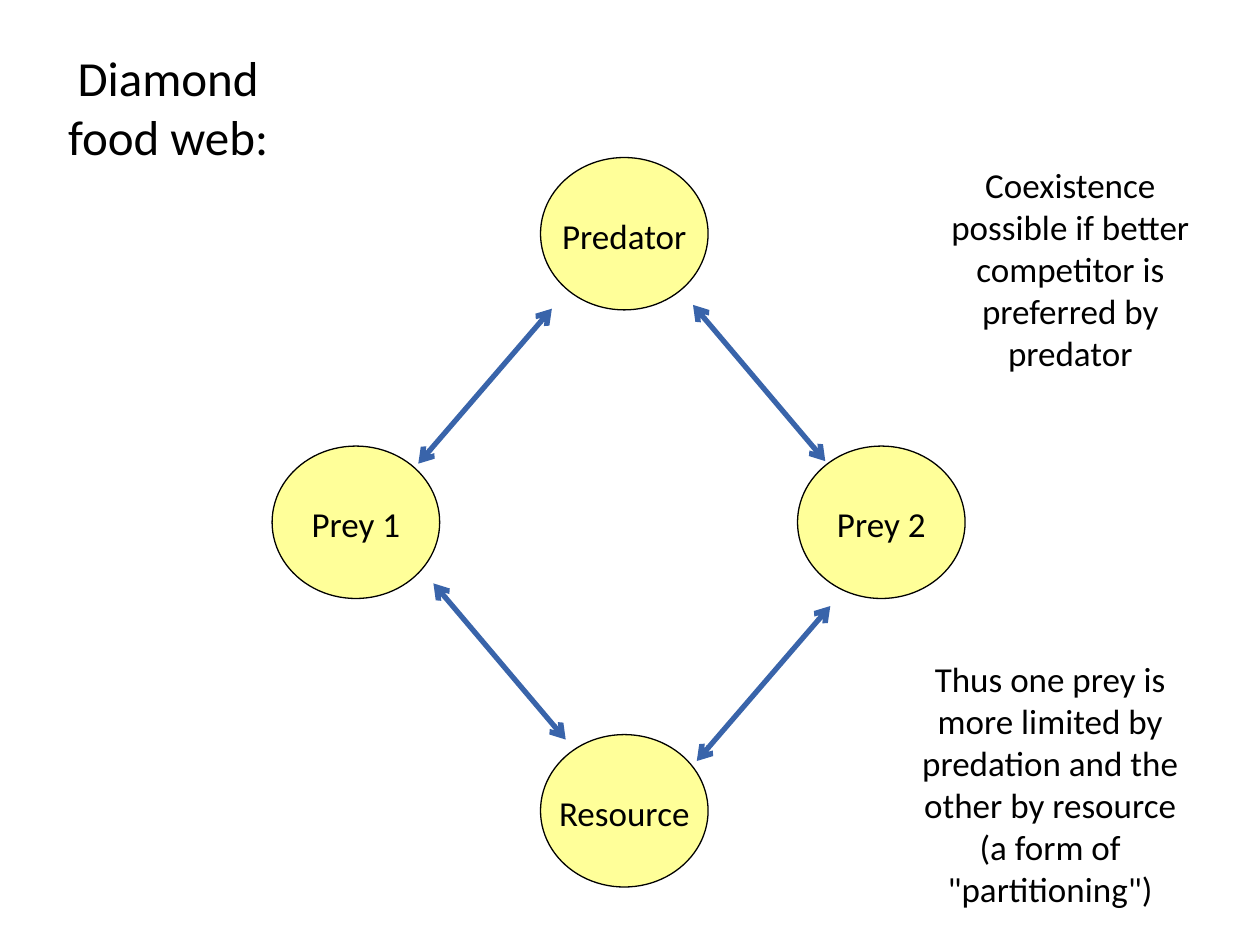
from dataclasses import dataclass

from lxml import etree
from pptx import Presentation
from pptx.dml.color import RGBColor
from pptx.enum import shapes, text
from pptx.oxml.ns import qn
from pptx.util import Inches, Pt


@dataclass(frozen=True)
class Theme:
    font: str = "Calibri"
    ink: RGBColor = RGBColor(0x00, 0x00, 0x00)
    node_fill: RGBColor = RGBColor(0xFF, 0xFF, 0x99)
    arrow: RGBColor = RGBColor(0x39, 0x64, 0xAA)
    title_size: int = 28
    body_size: int = 20
    outline: float = 0.75
    arrow_width: float = 3


THEME = Theme()
NODE_WIDTH, NODE_HEIGHT = 1.33, 1.21
LABEL_WIDTH, LABEL_HEIGHT = 1.37, 0.44
LABEL_OFFSET = 0.4

# name, left, top
NODES = [
    ("Predator", 4.29, 1.25),
    ("Prey 1", 2.16, 3.54),
    ("Prey 2", 6.33, 3.54),
    ("Resource", 4.29, 5.83),
]

# start and end points
FEEDING_LINKS = [
    ((5.5, 2.42), (6.55, 3.66)),
    ((3.44, 4.63), (4.49, 5.87)),
    ((6.59, 4.81), (5.53, 6.04)),
    ((4.38, 2.45), (3.32, 3.68)),
]

# wording, left, top, width, height, type size
TEXTS = [
    ("Diamond food web:", 0.17, 0.33, 2.33, 1.04, THEME.title_size),
    ("Coexistence possible if better competitor is preferred by predator",
     7.33, 1.25, 2.33, 1.78, THEME.body_size),
    ('Thus one prey is more limited by predation and the other by resource '
     '(a form of "partitioning")',
     7.17, 5.17, 2.33, 2.12, THEME.body_size),
]


def add_text(parent, wording, left, top, width, height, size):
    box = parent.add_textbox(Inches(left), Inches(top), Inches(width), Inches(height))
    frame = box.text_frame
    frame.word_wrap = True
    frame.auto_size = text.MSO_AUTO_SIZE.SHAPE_TO_FIT_TEXT
    frame.text = wording
    paragraph = frame.paragraphs[0]
    paragraph.alignment = text.PP_ALIGN.CENTER
    font = paragraph.runs[0].font
    font.name = THEME.font
    font.size = Pt(size)
    font.color.rgb = THEME.ink


def add_node(slide, name, left, top):
    """Group an ellipse with its centred label."""
    members = slide.shapes.add_group_shape().shapes
    ellipse = members.add_shape(
        shapes.MSO_SHAPE.OVAL,
        Inches(left), Inches(top), Inches(NODE_WIDTH), Inches(NODE_HEIGHT))
    ellipse.shadow.inherit = False
    ellipse.fill.solid()
    ellipse.fill.fore_color.rgb = THEME.node_fill
    ellipse.line.color.rgb = THEME.ink
    ellipse.line.width = Pt(THEME.outline)
    label_left = left + (NODE_WIDTH - LABEL_WIDTH) / 2
    add_text(members, name, label_left, top + LABEL_OFFSET,
             LABEL_WIDTH, LABEL_HEIGHT, THEME.body_size)


def add_double_arrow(slide, start, end):
    points = [Inches(value) for value in (*start, *end)]
    connector = slide.shapes.add_connector(shapes.MSO_CONNECTOR.STRAIGHT, *points)
    connector.line.color.rgb = THEME.arrow
    connector.line.width = Pt(THEME.arrow_width)
    line = connector.line._get_or_add_ln()
    for tag in ("a:headEnd", "a:tailEnd"):
        etree.SubElement(line, qn(tag), type="arrow")
    etree.SubElement(connector._element.spPr, qn("a:effectLst"))


def main():
    presentation = Presentation()
    presentation.slide_width = Inches(10)
    presentation.slide_height = Inches(7.5)
    slide = presentation.slides.add_slide(presentation.slide_layouts[6])
    for node in NODES:
        add_node(slide, *node)
    for start, end in FEEDING_LINKS:
        add_double_arrow(slide, start, end)
    for entry in TEXTS:
        add_text(slide.shapes, *entry)
    presentation.save("out.pptx")


if __name__ == "__main__":
    main()
